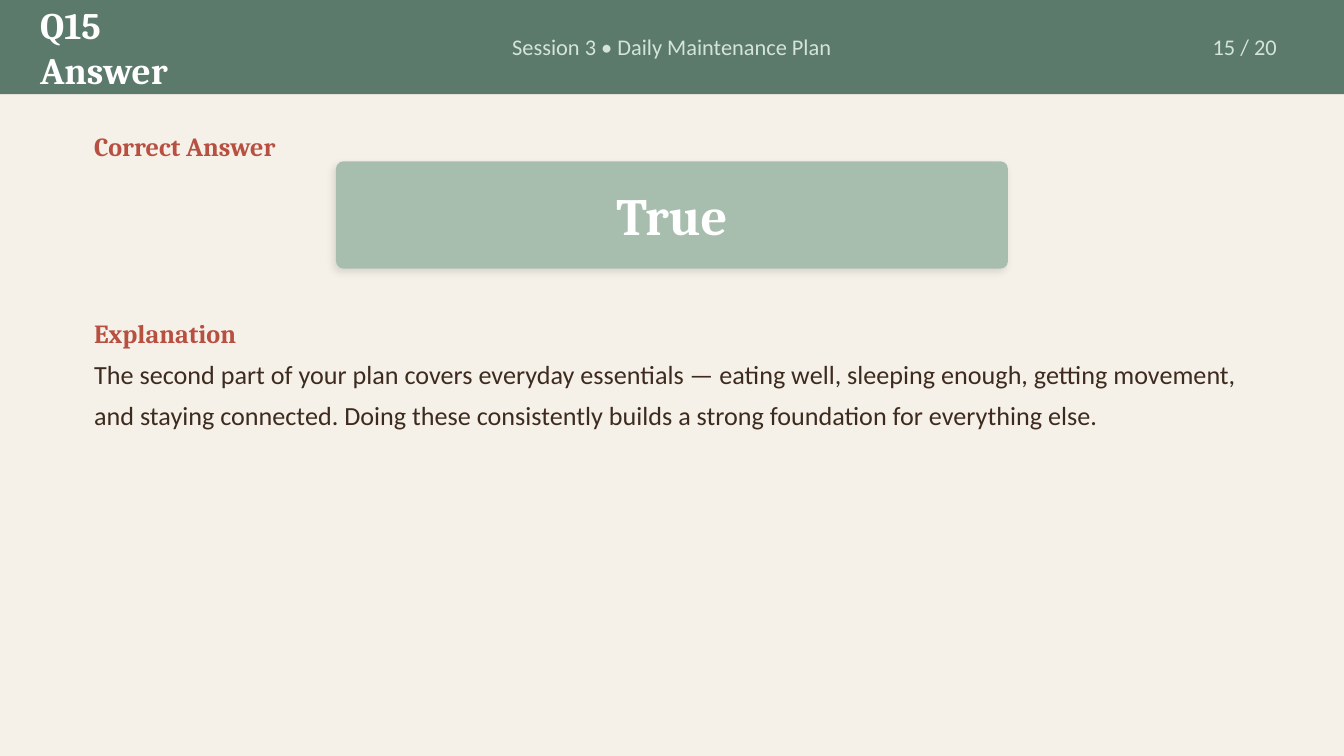
from lxml import etree
from pptx import Presentation
from pptx import util as u
from pptx.dml.color import RGBColor
from pptx.enum import shapes, text
from pptx.oxml.ns import qn

CREAM = RGBColor(0xF5, 0xF0, 0xE8)
GREEN = RGBColor(0x5C, 0x7A, 0x6B)
SAGE = RGBColor(0xA7, 0xBE, 0xAE)
MINT = RGBColor(0xD4, 0xE4, 0xDA)
RUST = RGBColor(0xB8, 0x50, 0x42)
BROWN = RGBColor(0x3D, 0x2B, 0x1F)
WHITE = RGBColor(0xFF, 0xFF, 0xFF)

LEFT, CENTER, RIGHT = text.PP_ALIGN.LEFT, text.PP_ALIGN.CENTER, text.PP_ALIGN.RIGHT
TOP, MIDDLE, BOTTOM = text.MSO_ANCHOR.TOP, text.MSO_ANCHOR.MIDDLE, text.MSO_ANCHOR.BOTTOM

# Text styles: font, size, colour, bold, anchor, line spacing
STYLES = {
    "title": ("Cambria", 20, WHITE, True, MIDDLE, 1),
    "header": ("Calibri", 12, MINT, False, MIDDLE, 1),
    "label": ("Cambria", 14, RUST, True, BOTTOM, 1),
    "answer": ("Cambria", 28, WHITE, True, MIDDLE, 1),
    "body": ("Calibri", 14, BROWN, False, TOP, 1.3),
}

# Layout in centimetres
WIDTH, HEIGHT = 25.4, 14.29
BAR_HEIGHT = 1.78
HEADER_TOP, HEADER_HEIGHT = 0.2, 1.37
MARGIN = 1.78
CONTENT_WIDTH = WIDTH - 2 * MARGIN
LABEL_HEIGHT = 1.02
ANSWER_TOP, ANSWER_WIDTH, ANSWER_HEIGHT = 3.05, 12.7, 2.03
BODY_TOP, BODY_HEIGHT = 6.6, 6.6

# Content: header items (text, style, left, width, alignment)
HEADER = [
    ("Q15 Answer", "title", 0.76, 3.56, LEFT),
    ("Session 3 • Daily Maintenance Plan", "header", 6.35, 12.7, CENTER),
    ("15 / 20", "header", 20.32, 3.81, RIGHT),
]
# Section labels sit directly above their content
LABELS = [("Correct Answer", ANSWER_TOP), ("Explanation", BODY_TOP)]
ANSWER = "True"
EXPLANATION = (
    "The second part of your plan covers everyday essentials — eating well, "
    "sleeping enough, getting movement, and staying connected. Doing these "
    "consistently builds a strong foundation for everything else."
)


def write(box, words, style, align=LEFT):
    font, size, colour, bold, anchor, spacing = STYLES[style]
    frame = box.text_frame
    frame.text = words
    frame.word_wrap = True
    frame.vertical_anchor = anchor
    frame.margin_left = frame.margin_right = 0
    frame.margin_top = frame.margin_bottom = 0
    para = frame.paragraphs[0]
    para.alignment = align
    para.line_spacing = spacing
    span = para.runs[0]
    span.font.name = font
    span.font.size = u.Pt(size)
    span.font.bold = bold
    span.font.color.rgb = colour


def add_text(page, words, style, left, top, width, height, align=LEFT):
    box = page.shapes.add_textbox(u.Cm(left), u.Cm(top), u.Cm(width), u.Cm(height))
    write(box, words, style, align)


def add_panel(page, kind, left, top, width, height, colour):
    panel = page.shapes.add_shape(kind, u.Cm(left), u.Cm(top), u.Cm(width), u.Cm(height))
    panel.shadow.inherit = False
    panel.fill.solid()
    panel.fill.fore_color.rgb = colour
    panel.line.fill.background()
    return panel


def add_soft_shadow(panel):
    effects = panel.element.spPr.find(qn("a:effectLst"))
    shadow = etree.SubElement(
        effects, qn("a:outerShdw"), blurRad=str(u.Pt(4)), dist=str(u.Pt(2)),
        dir=str(135 * 60000), algn="bl", rotWithShape="0")
    colour = etree.SubElement(shadow, qn("a:srgbClr"), val="000000")
    etree.SubElement(colour, qn("a:alpha"), val="10000")


def main():
    deck = Presentation()
    deck.slide_width, deck.slide_height = u.Cm(WIDTH), u.Cm(HEIGHT)
    page = deck.slides.add_slide(deck.slide_layouts[6])
    page.background.fill.solid()
    page.background.fill.fore_color.rgb = CREAM

    # Header bar
    add_panel(page, shapes.MSO_SHAPE.RECTANGLE, 0, 0, WIDTH, BAR_HEIGHT, GREEN)
    for words, style, left, width, align in HEADER:
        add_text(page, words, style, left, HEADER_TOP, width, HEADER_HEIGHT, align)

    # Section labels
    for words, bottom in LABELS:
        add_text(page, words, "label", MARGIN, bottom - LABEL_HEIGHT,
                 CONTENT_WIDTH, LABEL_HEIGHT)

    # Answer card
    card = add_panel(page, shapes.MSO_SHAPE.ROUNDED_RECTANGLE,
                     (WIDTH - ANSWER_WIDTH) / 2, ANSWER_TOP,
                     ANSWER_WIDTH, ANSWER_HEIGHT, SAGE)
    card.adjustments[0] = 0.07
    add_soft_shadow(card)
    write(card, ANSWER, "answer", CENTER)

    # Explanation
    add_text(page, EXPLANATION, "body", MARGIN, BODY_TOP, CONTENT_WIDTH, BODY_HEIGHT)

    deck.save("out.pptx")


if __name__ == "__main__":
    main()
